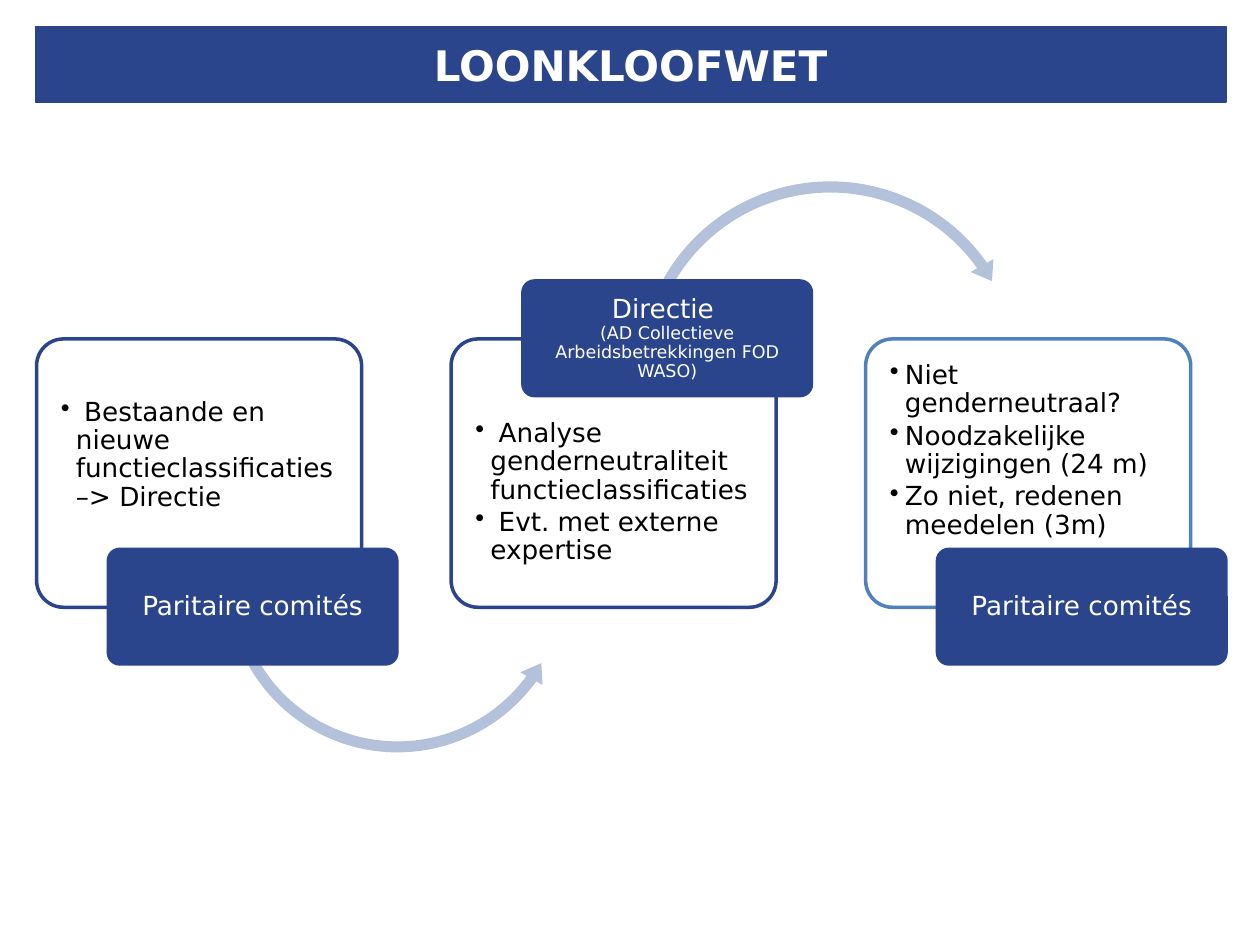
from lxml import etree
from pptx import Presentation
from pptx.dml.color import RGBColor
from pptx.enum.shapes import MSO_SHAPE as SHAPE
from pptx.enum.text import MSO_ANCHOR as ANCHOR, PP_ALIGN as ALIGN
from pptx.oxml.ns import qn
from pptx.util import Inches, Pt

NAVY = RGBColor(0x2A, 0x45, 0x8B)
BLUE = RGBColor(0x4F, 0x81, 0xBD)
PALE = RGBColor(0xB3, 0xC1, 0xDB)
WHITE = RGBColor(0xFF, 0xFF, 0xFF)
BLACK = RGBColor(0, 0, 0)

CARD_LEFT, CARD_TOP, CARD_PITCH = 0.29, 2.69, 3.29
TAB_SHIFT, TAB_ABOVE, TAB_BELOW = 0.57, 2.23, 4.36


class FlowSlide:
    font = "DejaVu Sans"
    body_size = 15

    def __init__(self, prs):
        self.slide = prs.slides.add_slide(prs.slide_layouts[5])

    def run(self, p, text, color, size=body_size, bold=False):
        r = p.add_run()
        r.text = text
        r.font.name = self.font
        r.font.size = Pt(size)
        r.font.bold = bold
        r.font.color.rgb = color

    def shape(self, kind, box, fill, line=None):
        sp = self.slide.shapes.add_shape(kind, *map(Inches, box))
        sp.shadow.inherit = False
        sp.fill.solid()
        sp.fill.fore_color.rgb = fill
        if line is None:
            sp.line.fill.background()
        else:
            sp.line.color.rgb = line
            sp.line.width = Pt(2)
        return sp

    def frame(self, sp, anchor, margins):
        tf = sp.text_frame
        tf.word_wrap = True
        tf.vertical_anchor = anchor
        (tf.margin_left, tf.margin_top,
         tf.margin_right, tf.margin_bottom) = map(Inches, margins)
        return tf

    def title(self, text):
        sp = self.slide.shapes.title
        sp.left, sp.top, sp.width, sp.height = map(Inches, (0.28, 0.21, 9.45, 0.6))
        sp.fill.solid()
        sp.fill.fore_color.rgb = NAVY
        sp.line.color.rgb = NAVY
        sp.line.width = Pt(0.75)
        sp.text_frame.vertical_anchor = ANCHOR.MIDDLE
        p = sp.text_frame.paragraphs[0]
        p.alignment = ALIGN.CENTER
        self.run(p, text, WHITE, 24, bold=True)

    def card(self, left, items, text_top, line):
        sp = self.shape(SHAPE.ROUNDED_RECTANGLE, (left, CARD_TOP, 2.58, 2.13), WHITE, line)
        sp.adjustments[0] = 0.1
        tf = self.frame(sp, ANCHOR.TOP, (0.13, text_top, 0.12, 0.1))
        for i, item in enumerate(items):
            p = tf.add_paragraph() if i else tf.paragraphs[0]
            self.bullet(p)
            p.alignment = ALIGN.LEFT
            p.line_spacing = 0.9
            p.space_after = Pt(2.25)
            self.run(p, item, BLACK)

    def bullet(self, p):
        pPr = p._p.get_or_add_pPr()
        pPr.set("marL", str(Inches(0.12)))
        pPr.set("indent", str(-Inches(0.12)))
        etree.SubElement(pPr, qn("a:buChar")).set("char", "•")

    def tab(self, left, top, label, detail=None):
        """Add the label block that overlaps a card edge."""
        sp = self.shape(SHAPE.ROUNDED_RECTANGLE, (left, top, 2.29, 0.91), NAVY, NAVY)
        sp.adjustments[0] = 0.1
        p = self.frame(sp, ANCHOR.MIDDLE, (0.03, 0.02, 0.03, 0.02)).paragraphs[0]
        p.alignment = ALIGN.CENTER
        p.line_spacing = 0.9
        self.run(p, label, WHITE)
        if detail:
            p.add_line_break()
            self.run(p, detail, WHITE, 10)

    def arc(self, kind, left, top, size, adjustments):
        sp = self.shape(kind, (left, top, size, size), PALE)
        for i, value in enumerate(adjustments):
            sp.adjustments[i] = value


def main():
    prs = Presentation()
    prs.slide_width, prs.slide_height = Inches(10), Inches(7.5)
    s = FlowSlide(prs)
    s.title("LOONKLOOFWET")

    cards = [
        ([" Bestaande en nieuwe functieclassificaties –> Directie"], 0.41, NAVY),
        ([" Analyse genderneutraliteit functieclassificaties",
          " Evt. met externe expertise"], 0.58, NAVY),
        (["Niet genderneutraal?", "Noodzakelijke wijzigingen (24 m)",
          "Zo niet, redenen meedelen (3m)"], 0.12, BLUE),
    ]
    lefts = [CARD_LEFT + i * CARD_PITCH for i in range(len(cards))]
    for left, (items, text_top, line) in zip(lefts, cards):
        s.card(left, items, text_top, line)

    s.arc(SHAPE.LEFT_CIRCULAR_ARROW, 1.74, 3.2, 2.83,
          (0.031, 3.83, 21.585, 90.245, 0.036))
    s.arc(SHAPE.CIRCULAR_ARROW, 5.01, 1.38, 3.16,
          (0.028, 3.405, 194.84, 125.755, 0.033))

    tabs = [
        (TAB_BELOW, "Paritaire comités", None),
        (TAB_ABOVE, "Directie ", "(AD Collectieve Arbeidsbetrekkingen FOD WASO)"),
        (TAB_BELOW, "Paritaire comités", None),
    ]
    for left, (top, label, detail) in zip(lefts, tabs):
        s.tab(left + TAB_SHIFT, top, label, detail)

    prs.save("out.pptx")


if __name__ == "__main__":
    main()
